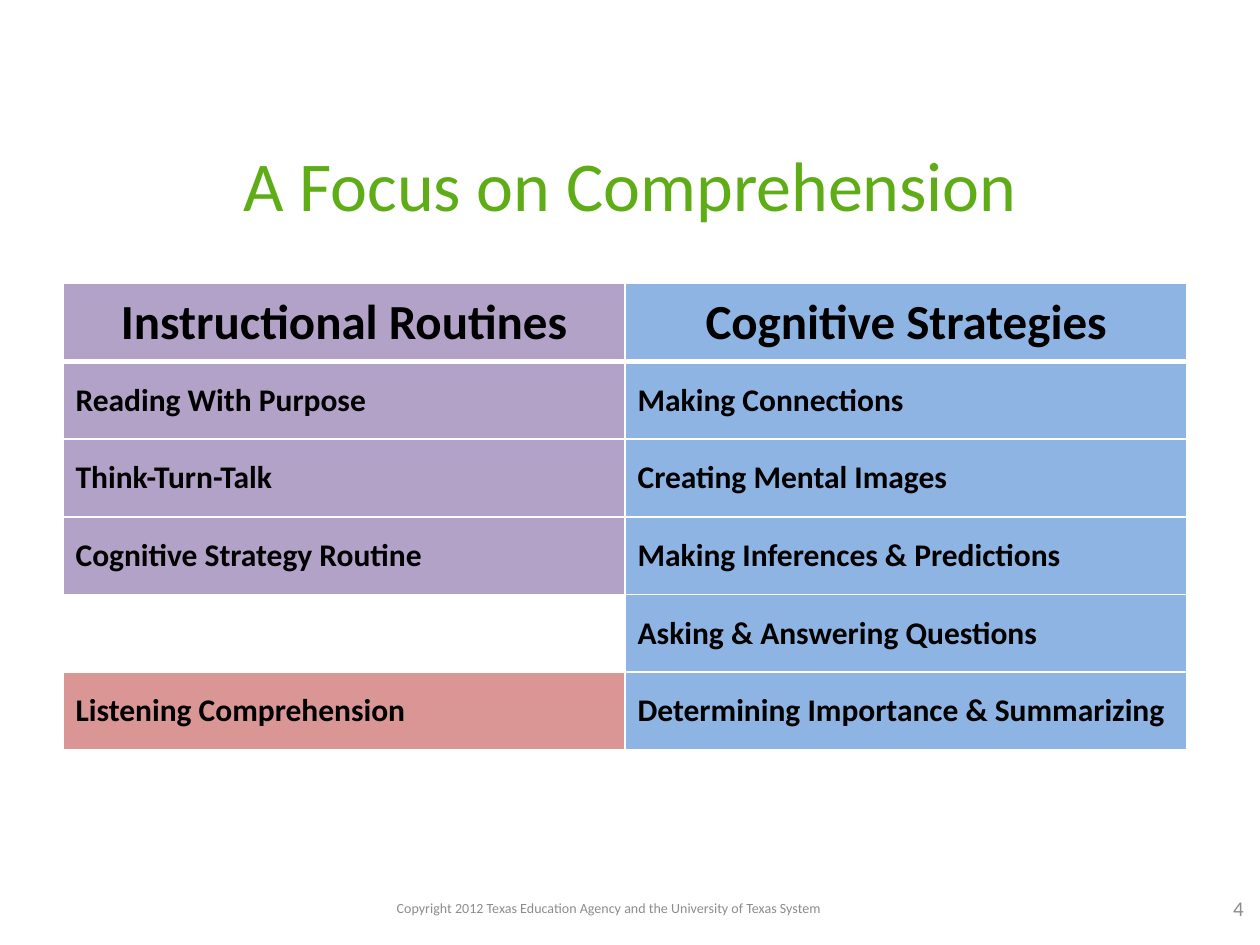
from lxml import etree
from pptx import Presentation
from pptx.dml.color import RGBColor
from pptx.enum import text
from pptx.oxml.ns import qn
from pptx.util import Cm, Pt

FONT = "Calibri"
GREEN = RGBColor(0x5E, 0xAD, 0x16)
GREY = RGBColor(0x8C, 0x8C, 0x8C)
BLACK = RGBColor(0x00, 0x00, 0x00)
WHITE = RGBColor(0xFF, 0xFF, 0xFF)
PURPLE = RGBColor(0xB3, 0xA2, 0xC7)
BLUE = RGBColor(0x8E, 0xB4, 0xE3)
ROSE = RGBColor(0xD9, 0x96, 0x94)

HEADINGS = ["Instructional Routines", "Cognitive Strategies"]
# Each row: routine, its fill, strategy
ROWS = [
    ("Reading With Purpose", PURPLE, "Making Connections"),
    ("Think-Turn-Talk", PURPLE, "Creating Mental Images"),
    ("Cognitive Strategy Routine", PURPLE, "Making Inferences & Predictions"),
    ("", None, "Asking & Answering Questions"),
    ("Listening Comprehension", ROSE, "Determining Importance & Summarizing"),
]


def write(frame, words, size=18, color=BLACK, bold=False,
          align=text.PP_ALIGN.LEFT):
    """Put one formatted paragraph into a text frame."""
    paragraph = frame.paragraphs[0]
    paragraph.text = words
    paragraph.alignment = align
    font = paragraph.font
    font.name, font.size, font.bold = FONT, Pt(size), bold
    font.color.rgb = color


def set_borders(cell, bottom=1):
    """Draw white lines round a cell; they must precede its fill."""
    properties = cell._tc.get_or_add_tcPr()
    widths = {"a:lnL": 1, "a:lnR": 1, "a:lnT": 1, "a:lnB": bottom}
    for index, (side, width) in enumerate(widths.items()):
        line = etree.Element(qn(side), w=str(Pt(width)))
        solid = etree.SubElement(line, qn("a:solidFill"))
        etree.SubElement(solid, qn("a:srgbClr"), val=str(WHITE))
        properties.insert(index, line)


def fill_cell(cell, words, fill, bottom=1, **style):
    cell.vertical_anchor = text.MSO_ANCHOR.MIDDLE
    write(cell.text_frame, words, bold=True, **style)
    if fill is None:
        cell.fill.background()
    else:
        cell.fill.solid()
        cell.fill.fore_color.rgb = fill
    set_borders(cell, bottom)


def place_title(slide, left, top, width, height):
    title = slide.shapes.title
    title.left, title.top, title.width, title.height = left, top, width, height
    title.text_frame.vertical_anchor = text.MSO_ANCHOR.MIDDLE
    write(title.text_frame, "A Focus on Comprehension", size=40, color=GREEN,
          align=text.PP_ALIGN.CENTER)


def place_table(slide, left, top, width, height):
    table = slide.shapes.add_table(
        len(ROWS) + 1, len(HEADINGS), left, top, width, height).table
    table.horz_banding = False

    # Heading row
    for column, (heading, fill) in enumerate(zip(HEADINGS, (PURPLE, BLUE))):
        fill_cell(table.cell(0, column), heading, fill, bottom=3, size=28,
                  align=text.PP_ALIGN.CENTER)

    # Routines beside strategies
    for row, (routine, routine_fill, strategy) in enumerate(ROWS, start=1):
        fill_cell(table.cell(row, 0), routine, routine_fill)
        fill_cell(table.cell(row, 1), strategy, BLUE)


def place_footer(slide, left, top, width, height, words, size):
    box = slide.shapes.add_textbox(left, top, width, height)
    frame = box.text_frame
    frame.word_wrap = True
    frame.vertical_anchor = text.MSO_ANCHOR.MIDDLE
    write(frame, words, size=size, color=GREY, align=text.PP_ALIGN.CENTER)


def main():
    deck = Presentation()
    deck.slide_width, deck.slide_height = Cm(25.4), Cm(19.05)
    slide = deck.slides.add_slide(deck.slide_layouts[5])

    place_title(slide, Cm(1.27), Cm(2.64), Cm(22.86), Cm(2.13))
    place_table(slide, Cm(1.27), Cm(5.72), Cm(22.66), Cm(9.4))

    # Copyright line and page number
    place_footer(
        slide, Cm(5.08), Cm(17.98), Cm(14.4), Cm(0.64),
        "Copyright 2012 Texas Education Agency and the University of Texas System",
        size=8)
    place_footer(slide, Cm(24.33), Cm(17.96), Cm(1.27), Cm(0.69), "4", size=12)

    deck.save("out.pptx")


if __name__ == "__main__":
    main()
